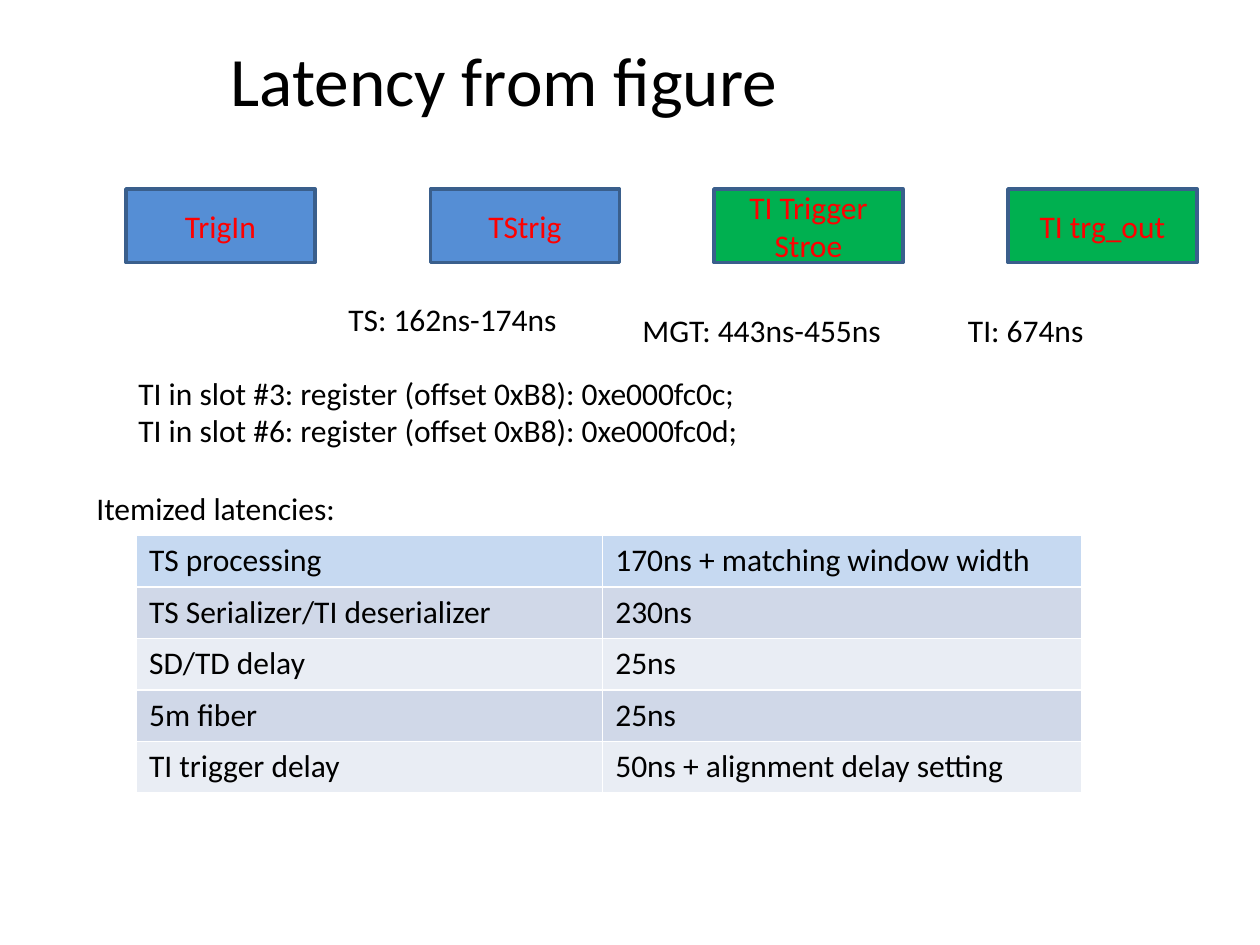
from pptx import Presentation
from pptx.dml.color import RGBColor
from pptx.enum.shapes import MSO_SHAPE as Shape
from pptx.enum.text import MSO_ANCHOR as Anchor, PP_ALIGN as Align
from pptx.util import Emu, Pt

PX = 914400 // 120  # EMU in one px

BLUE, GREEN, EDGE = "558ED5", "00B050", "3A5F8C"
HEAD, DARK, LIGHT = "C6D9F1", "D0D8E8", "E9EDF4"

STAGES = [
    (120, "TrigIn", BLUE),
    (410, "TStrig", BLUE),
    (680, "TI Trigger Stroe", GREEN),
    (960, "TI trg_out", GREEN),
]
NOTES = [
    (320, 280, 224, 48, "TS: 162ns-174ns", False),
    (600, 290, 254, 48, "MGT: 443ns-455ns", False),
    (910, 290, 136, 48, "TI: 674ns", False),
    (120, 350, 599, 85, "TI in slot #3: register (offset 0xB8): 0xe000fc0c;\n"
                        "TI in slot #6: register (offset 0xB8): 0xe000fc0d;", False),
    (80, 460, 1098, 48, "Itemized latencies:", True),
]
DELAYS = [
    ("TS processing", "170ns + matching window width"),
    ("TS Serializer/TI deserializer", "230ns"),
    ("SD/TD delay", "25ns"),
    ("5m fiber", "25ns"),
    ("TI trigger delay", "50ns + alignment delay setting"),
]


def px(*sizes):
    return [Emu(size * PX) for size in sizes]


def paint(fill, color):
    fill.solid()
    fill.fore_color.rgb = RGBColor.from_string(color)


def write(frame, text, color="000000", size=18, align=Align.LEFT):
    frame.text = text
    for para in frame.paragraphs:
        para.alignment = align
        for run in para.runs:
            font = run.font
            font.name, font.size, font.bold = "Calibri", Pt(size), False
            paint(font.fill, color)


def add_title(slide, text):
    title = slide.shapes.title
    title.left, title.top, title.width, title.height = px(80, 30, 800, 90)
    write(title.text_frame, text, size=39.6, align=Align.CENTER)
    title.text_frame.vertical_anchor = Anchor.MIDDLE


def add_stage(slide, left, text, color):
    box = slide.shapes.add_shape(Shape.RECTANGLE, *px(left, 180, 180, 70))
    box.shadow.inherit = False
    paint(box.fill, color)
    paint(box.line.fill, EDGE)
    box.line.width = Pt(2)
    write(box.text_frame, text, "FF0000", align=Align.CENTER)
    box.text_frame.vertical_anchor = Anchor.MIDDLE


def add_note(slide, left, top, width, height, text, wrap):
    box = slide.shapes.add_textbox(*px(left, top, width, height))
    box.text_frame.word_wrap = wrap
    write(box.text_frame, text)


def add_delays(slide, rows):
    frame = slide.shapes.add_table(len(rows), 2, *px(130, 510, 900, 49 * len(rows)))
    table = frame.table
    for col, width in zip(table.columns, px(444, 456)):
        col.width = width
    for i, row in enumerate(rows):
        color = HEAD if i == 0 else DARK if i % 2 else LIGHT
        for j, text in enumerate(row):
            cell = table.cell(i, j)
            paint(cell.fill, color)
            write(cell.text_frame, text)


def main():
    deck = Presentation()
    deck.slide_width, deck.slide_height = px(1200, 900)
    slide = deck.slides.add_slide(deck.slide_layouts[5])

    # Title and signal chain
    add_title(slide, "Latency from figure")
    for stage in STAGES:
        add_stage(slide, *stage)

    # Measured values and registers
    for note in NOTES:
        add_note(slide, *note)

    # Itemized latencies
    add_delays(slide, DELAYS)
    deck.save("out.pptx")


if __name__ == "__main__":
    main()
